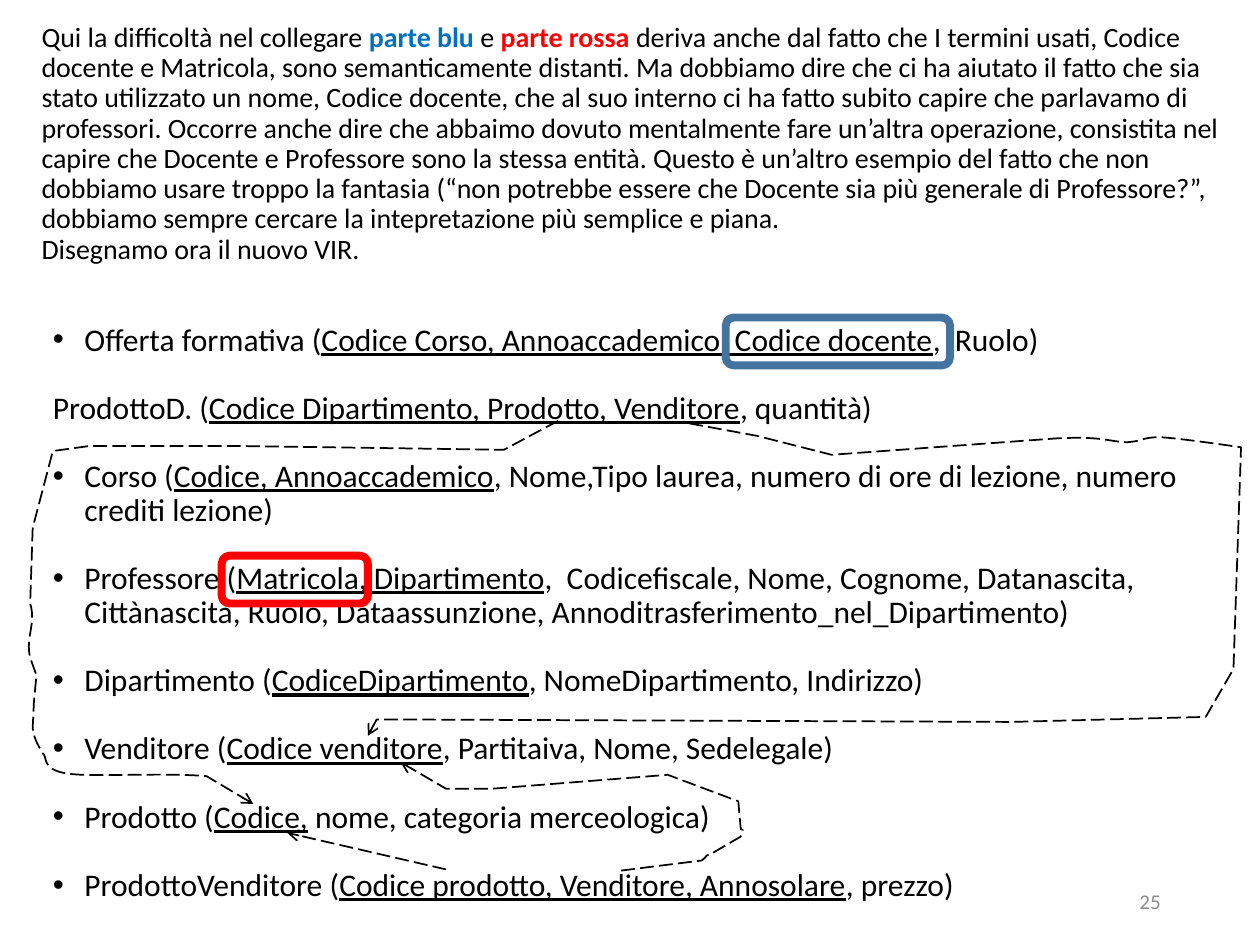
import pptx
import pptx.dml.color
import pptx.enum.dml
import pptx.enum.shapes
import pptx.enum.text
import pptx.oxml.ns
import pptx.util

Inches = pptx.util.Inches
Pt = pptx.util.Pt
qn = pptx.oxml.ns.qn

FONT = "Calibri"
COLORS = {"text": "000000", "blue": "0070C0", "red": "FF0000",
          "frame_blue": "43739E", "number": "8C8C8C"}

INTRO = [
    ("Qui la difficoltà nel collegare ", "text"),
    ("parte blu ", "blue"),
    ("e ", "text"),
    ("parte rossa ", "red"),
    ("deriva anche dal fatto che I termini usati, Codice docente e Matricola, sono "
     "semanticamente distanti. Ma dobbiamo dire che ci ha aiutato il fatto che sia stato "
     "utilizzato un nome, Codice docente, che al suo interno ci ha fatto subito capire che "
     "parlavamo di professori. Occorre anche dire che abbaimo dovuto mentalmente fare "
     "un’altra operazione, consistita nel capire che Docente e Professore sono la stessa "
     "entità. Questo è un’altro esempio del fatto che non dobbiamo usare troppo la fantasia "
     "(“non potrebbe essere che Docente sia più generale di Professore?”, dobbiamo sempre "
     "cercare la intepretazione più semplice e piana.", "text"),
]
CLOSING = "Disegnamo ora il nuovo VIR."

RELATIONS = [
    ("Offerta formativa (", "Codice Corso, Annoaccademico, Codice docente", ",  Ruolo)", True),
    ("ProdottoD. (", "Codice Dipartimento, Prodotto, Venditore", ", quantità)", False),
    ("Corso (", "Codice, Annoaccademico",
     ", Nome,Tipo laurea, numero di ore di lezione, numero crediti lezione)", True),
    ("Professore (", "Matricola, Dipartimento",
     ",  Codicefiscale, Nome, Cognome, Datanascita, Cittànascita, Ruolo, Dataassunzione, "
     "Annoditrasferimento_nel_Dipartimento)", True),
    ("Dipartimento (", "CodiceDipartimento", ", NomeDipartimento, Indirizzo)", True),
    ("Venditore (", "Codice venditore", ", Partitaiva, Nome, Sedelegale)", True),
    ("Prodotto (", "Codice,", " nome, categoria merceologica)", True),
    ("ProdottoVenditore (", "Codice prodotto, Venditore, Annosolare", ", prezzo)", True),
]

SALES_TO_VENDOR = [
    (5.47, 3.36), (6.01, 3.46), (6.6, 3.61), (8.38, 3.48),
    (8.77, 3.46, 8.81, 3.51, 8.95, 3.51), (9.08, 3.5, 9.06, 3.47, 9.21, 3.47),
    (9.36, 3.48, 9.64, 3.52, 9.85, 3.55), (9.79, 5.31), (9.57, 5.69),
    (8.03, 5.73), (2.99, 5.71), (2.92, 5.84)]
SUPPLY_TO_VENDOR = [
    (4.93, 6.91), (5.57, 6.83), (5.59, 6.82, 5.6, 6.8, 5.61, 6.79),
    (5.62, 6.79, 5.64, 6.78, 5.64, 6.78), (5.88, 6.64),
    (5.89, 6.58, 5.91, 6.59, 5.88, 6.58), (5.86, 6.36), (5.3, 6.15),
    (3.91, 6.26), (3.54, 6.26), (3.18, 6.05)]
SALES_TO_PRODUCT = [
    (4.43, 3.34), (4, 3.57), (1.9, 3.54), (0.71, 3.54), (0.42, 3.58),
    (0.26, 4.19), (0.24, 4.79), (0.29, 4.95, 0.2, 5.06, 0.24, 5.22),
    (0.29, 5.36), (0.27, 5.57), (0.26, 5.78),
    (0.27, 5.86, 0.29, 5.89, 0.34, 5.98), (0.38, 6, 0.32, 6.11, 0.54, 6.14),
    (0.75, 6.17, 1.27, 6.13, 1.64, 6.16), (2.01, 6.38)]


def rgb(name):
    return pptx.dml.color.RGBColor.from_string(COLORS[name])


def place(shape, box):
    shape.left, shape.top, shape.width, shape.height = (Inches(v) for v in box)


def add_run(paragraph, text, size, color="text", bold=False, underline=False):
    run = paragraph.add_run()
    run.text = text
    run.font.name = FONT
    run.font.size = Pt(size)
    run.font.bold = bold
    run.font.underline = underline
    run.font.color.rgb = rgb(color)


def fill_title(title, box):
    place(title, box)
    frame = title.text_frame
    frame.auto_size = pptx.enum.text.MSO_AUTO_SIZE.NONE
    frame.vertical_anchor = pptx.enum.text.MSO_ANCHOR.MIDDLE
    paragraph = frame.paragraphs[0]
    paragraph.alignment = pptx.enum.text.PP_ALIGN.LEFT
    paragraph.line_spacing = 0.9
    for text, color in INTRO:
        add_run(paragraph, text, 16, color, bold=color != "text")
    paragraph.add_line_break()
    add_run(paragraph, CLOSING, 16)


def set_bullet(paragraph, bulleted):
    properties = paragraph._p.get_or_add_pPr()
    indent = Inches(0.25) if bulleted else 0
    properties.set("marL", str(indent))
    properties.set("indent", str(-indent))
    tag, attributes = ("a:buChar", {"char": "•"}) if bulleted else ("a:buNone", {})
    properties.append(properties.makeelement(qn(tag), attributes))


def fill_relations(body, box):
    place(body, box)
    frame = body.text_frame
    frame.auto_size = pptx.enum.text.MSO_AUTO_SIZE.NONE
    for index, (name, key, rest, bulleted) in enumerate(RELATIONS):
        paragraph = frame.add_paragraph() if index else frame.paragraphs[0]
        set_bullet(paragraph, bulleted)
        paragraph.line_spacing = 0.9
        paragraph.space_before = Pt(19.5 if index else 0)
        paragraph.space_after = Pt(0)
        add_run(paragraph, name, 18)
        add_run(paragraph, key, 18, underline=True)
        add_run(paragraph, rest, 18)


def style_arrow(shape):
    shape.line.color.rgb = rgb("text")
    shape.line.width = Pt(1)
    shape.line.dash_style = pptx.enum.dml.MSO_LINE.LONG_DASH
    line = shape.line._get_or_add_ln()
    line.append(line.makeelement(qn("a:tailEnd"), {"type": "arrow"}))


def add_link(slide, pieces):
    points = [(Inches(piece[i]), Inches(piece[i + 1]))
              for piece in pieces for i in range(0, len(piece), 2)]
    builder = slide.shapes.build_freeform(*points[0])
    builder.add_line_segments(points[1:], close=False)
    shape = builder.convert_to_shape()
    shape.shadow.inherit = False
    shape.fill.background()
    style_arrow(shape)
    segments = iter(shape._element.findall(".//" + qn("a:lnTo")))
    for piece in pieces[1:]:
        segment = next(segments)
        if len(piece) == 6:
            curve = segment.makeelement(qn("a:cubicBezTo"), {})
            segment.addprevious(curve)
            for part in (segment, next(segments), next(segments)):
                curve.append(part[0])
                part.getparent().remove(part)


def add_straight_link(slide, start, end):
    connector = slide.shapes.add_connector(
        pptx.enum.shapes.MSO_CONNECTOR.STRAIGHT, *(Inches(v) for v in start + end))
    style_arrow(connector)
    properties = connector._element.spPr
    properties.append(properties.makeelement(qn("a:effectLst"), {}))


def add_frame(slide, box, color):
    shape = slide.shapes.add_shape(
        pptx.enum.shapes.MSO_SHAPE.ROUNDED_RECTANGLE, *(Inches(v) for v in box))
    shape.shadow.inherit = False
    shape.fill.background()
    shape.line.color.rgb = rgb(color)
    shape.line.width = Pt(4.5)


def add_slide_number(slide, box):
    frame = slide.shapes.add_textbox(*(Inches(v) for v in box)).text_frame
    frame.word_wrap = True
    frame.vertical_anchor = pptx.enum.text.MSO_ANCHOR.MIDDLE
    paragraph = frame.paragraphs[0]
    paragraph.alignment = pptx.enum.text.PP_ALIGN.RIGHT
    add_run(paragraph, "25", 12, "number")


def main():
    presentation = pptx.Presentation()
    presentation.slide_width = Inches(10)
    presentation.slide_height = Inches(7.5)
    slide = presentation.slides.add_slide(presentation.slide_layouts[1])
    fill_title(slide.shapes.title, (0.23, 0.67, 9.59, 0.95))
    fill_relations(slide.placeholders[1], (0.32, 2.52, 9.56, 4.85))
    add_link(slide, SALES_TO_VENDOR)
    add_link(slide, SUPPLY_TO_VENDOR)
    add_straight_link(slide, (3.54, 6.9), (2.28, 6.61))
    add_frame(slide, (5.76, 2.52, 1.78, 0.38), "frame_blue")
    add_frame(slide, (1.76, 4.41, 1.16, 0.38), "red")
    add_link(slide, SALES_TO_PRODUCT)
    add_slide_number(slide, (7.06, 6.95, 2.25, 0.4))
    presentation.save("out.pptx")


if __name__ == "__main__":
    main()
